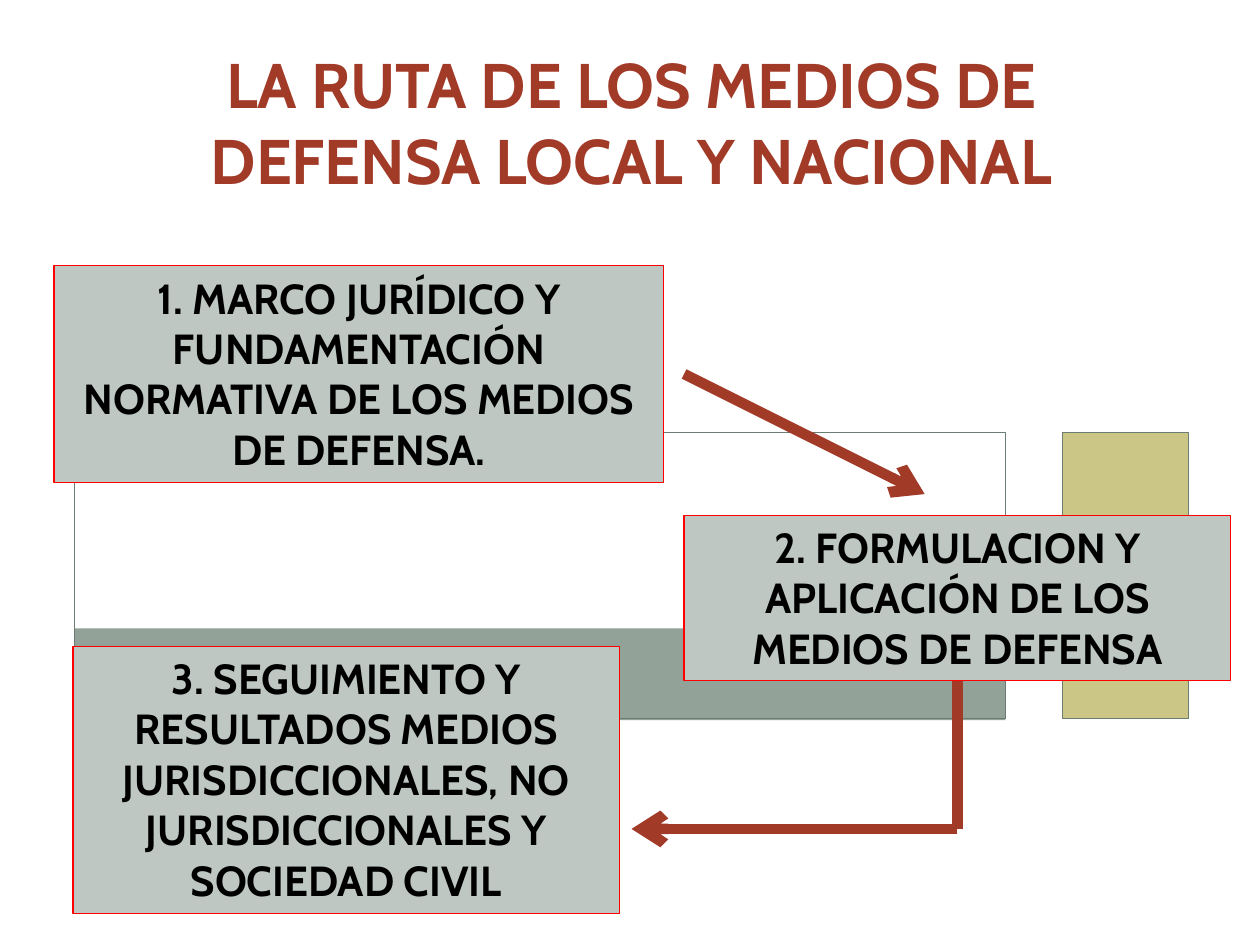
import pptx
import pptx.util
import pptx.dml.color
import pptx.enum.shapes
import pptx.enum.text
import pptx.oxml.ns
from lxml import etree

Cm, Pt = pptx.util.Cm, pptx.util.Pt
RGBColor = pptx.dml.color.RGBColor
SHAPE = pptx.enum.shapes.MSO_SHAPE
qn = pptx.oxml.ns.qn

WHITE = RGBColor(0xFF, 0xFF, 0xFF)
BLACK = RGBColor(0, 0, 0)
RUST = RGBColor(0xA2, 0x3A, 0x28)
RED = RGBColor(0xFF, 0, 0)
SAGE = RGBColor(0x93, 0xA2, 0x99)
PALE_SAGE = RGBColor(0xBE, 0xC7, 0xC2)
OLIVE = RGBColor(0xB5, 0xAE, 0x53)
FRAME = RGBColor(0x6B, 0x7D, 0x72)

FRAME_TOP, FRAME_HEIGHT = 8.71, 5.77

STEPS = [
    ("1. MARCO JURÍDICO Y FUNDAMENTACIÓN NORMATIVA DE LOS MEDIOS DE DEFENSA.",
     (1.09, 5.36, 12.29, 4.37)),
    ("2. FORMULACION Y APLICACIÓN DE LOS MEDIOS DE DEFENSA",
     (13.79, 10.39, 11.02, 3.33)),
    ("3. SEGUIMIENTO Y RESULTADOS MEDIOS JURISDICCIONALES, NO "
     "JURISDICCIONALES Y SOCIEDAD CIVIL",
     (1.47, 13.03, 11.02, 5.38)),
]


def set_text(sp, text, size, color):
    tf = sp.text_frame
    tf.word_wrap = True
    tf.auto_size = pptx.enum.text.MSO_AUTO_SIZE.NONE
    tf.vertical_anchor = pptx.enum.text.MSO_ANCHOR.TOP
    p = tf.paragraphs[0]
    p.alignment = pptx.enum.text.PP_ALIGN.CENTER
    p.space_before = Pt(0)
    r = p.add_run()
    r.text = text
    r.font.name = "Cabin"
    r.font.size = Pt(size)
    r.font.bold = True
    r.font.color.rgb = color


def add_box(s, box, fill=None, line=None, width=0.5, opacity=None,
            kind=SHAPE.RECTANGLE):
    """Add a shape; box is left, top, width, height in cm, opacity in percent."""
    sp = s.shapes.add_shape(kind, *map(Cm, box))
    sp.shadow.inherit = False
    if fill is None:
        sp.fill.background()
    else:
        sp.fill.solid()
        sp.fill.fore_color.rgb = fill
    if opacity is not None:
        clr = sp.fill._xPr.find(".//" + qn("a:srgbClr"))
        etree.SubElement(clr, qn("a:alpha"), val=str(opacity * 1000))
    if line is None:
        sp.line.fill.background()
    else:
        sp.line.color.rgb = line
        sp.line.width = Pt(width)
    return sp


def add_line(s, start, end, arrow=True):
    cn = s.shapes.add_connector(pptx.enum.shapes.MSO_CONNECTOR.STRAIGHT,
                                *map(Cm, start + end))
    cn.line.color.rgb = RUST
    cn.line.width = Pt(6)
    if arrow:
        etree.SubElement(cn.line._get_or_add_ln(), qn("a:tailEnd"), type="arrow")
    etree.SubElement(cn._element.spPr, qn("a:effectLst"))
    return cn


def add_backdrop(s):
    page = add_box(s, (0.25, 0.28, 24.89, 18.52), WHITE,
                   kind=SHAPE.ROUNDED_RECTANGLE)
    page.adjustments[0] = 0.02
    add_box(s, (0.97, 8.18, 19.86, 6.83), WHITE, opacity=83)
    add_box(s, (21.03, 8.18, 3.3, 6.83), WHITE, opacity=83)
    add_box(s, (21.41, FRAME_TOP, 2.54, FRAME_HEIGHT), OLIVE, FRAME, opacity=70)
    add_box(s, (1.24, 8.48, 19.3, 6.25), WHITE)
    add_box(s, (1.5, 12.67, 18.77, 1.85), SAGE)
    add_box(s, (1.5, FRAME_TOP, 18.77, FRAME_HEIGHT), line=FRAME)


def add_title(s, text):
    title = s.shapes.title
    title.left, title.top, title.width, title.height = map(
        Cm, (1.7, 0.79, 22.05, 3.33))
    set_text(title, text, 36, RUST)
    # Bring the title in front of the backdrop
    s.shapes._spTree.append(title._element)


def add_step(s, text, box):
    sp = add_box(s, box, PALE_SAGE, RED, 0.75)
    set_text(sp, text, 24, BLACK)
    return sp


def main():
    prs = pptx.Presentation()
    prs.slide_width, prs.slide_height = Cm(25.4), Cm(19.05)
    s = prs.slides.add_slide(prs.slide_layouts[5])
    add_backdrop(s)
    add_title(s, "LA RUTA DE LOS MEDIOS DE DEFENSA LOCAL Y NACIONAL")
    steps = [add_step(s, text, box) for text, box in STEPS]

    corner = (19.3, 16.71)
    add_line(s, (13.79, 7.54), (18.64, 9.96))
    add_line(s, corner, (12.73, 16.71))
    stem = add_line(s, (19.3, 13.72), corner, arrow=False)
    stem.begin_connect(steps[1], 2)
    prs.save("out.pptx")


if __name__ == "__main__":
    main()
